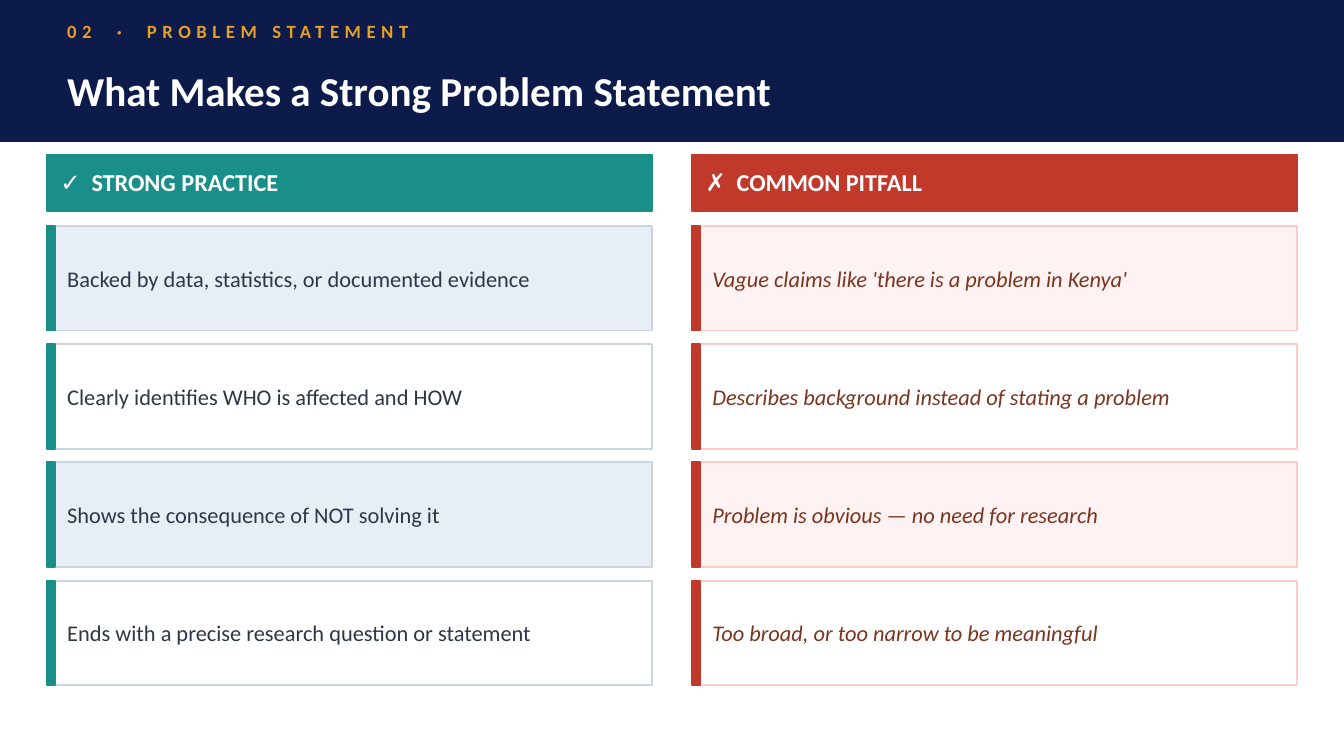
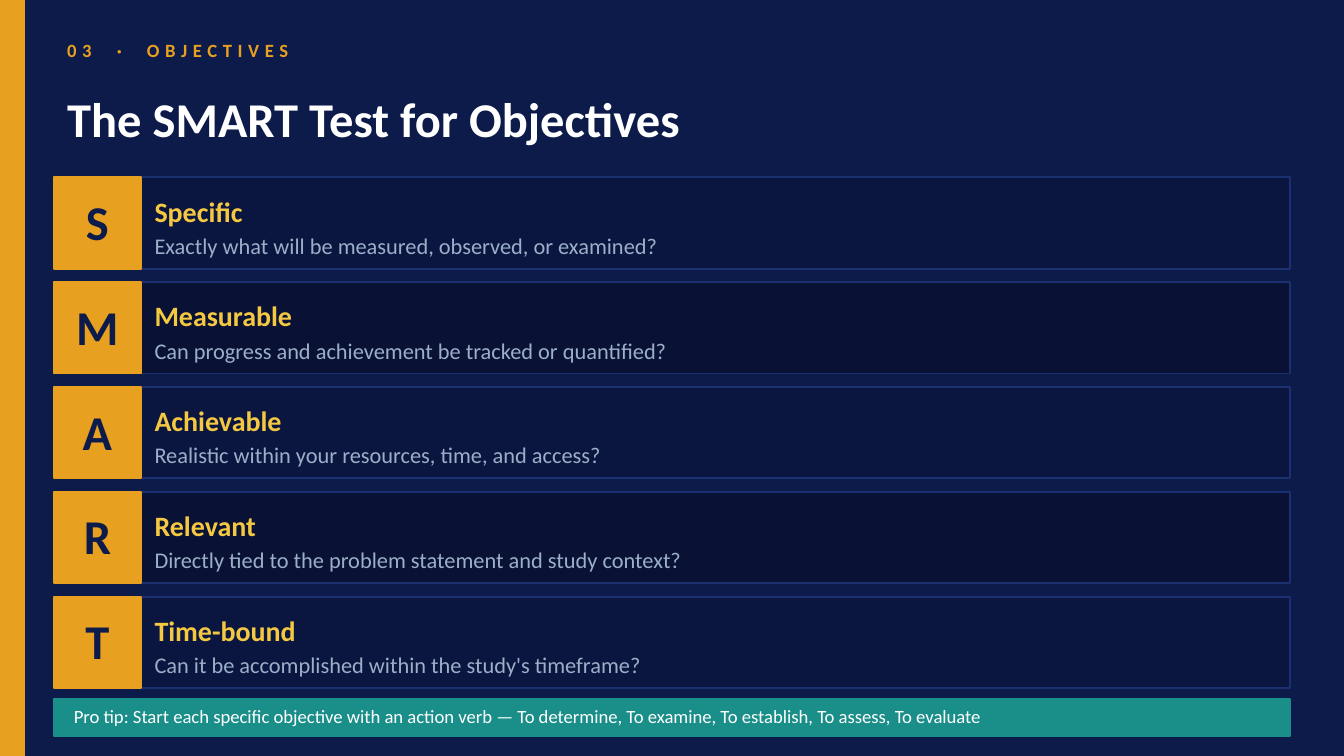
"""Build two research-writing slides: problem statements and SMART objectives."""
from pptx import Presentation
from pptx.dml.color import RGBColor
from pptx.enum import shapes, text
from pptx.oxml import ns
from pptx.util import Pt

FONT = "Calibri"
WIDE, HIGH = 720, 405
HEX = {
    "navy": "0D1B4B", "gold": "E8A020", "teal": "1A8F8A", "red": "C0392B",
    "white": "FFFFFF", "ink": "2D3748", "rust": "7B341E", "mist": "E8EEF6",
    "steel": "CBD5E0", "blush": "FEF2F2", "pink": "FECACA", "deep": "0A1640",
    "night": "091235", "edge": "1A3070", "sun": "F5C842", "haze": "9CAFC8",
}
SIDES = [
    {"head": "✓  STRONG PRACTICE", "main": "teal", "tint": "mist",
     "edge": "steel", "ink": "ink", "italic": False, "rows": [
         "Backed by data, statistics, or documented evidence",
         "Clearly identifies WHO is affected and HOW",
         "Shows the consequence of NOT solving it",
         "Ends with a precise research question or statement"]},
    {"head": "✗  COMMON PITFALL", "main": "red", "tint": "blush",
     "edge": "pink", "ink": "rust", "italic": True, "rows": [
         "Vague claims like 'there is a problem in Kenya'",
         "Describes background instead of stating a problem",
         "Problem is obvious — no need for research",
         "Too broad, or too narrow to be meaningful"]},
]
SMART = [
    ("Specific", "Exactly what will be measured, observed, or examined?"),
    ("Measurable", "Can progress and achievement be tracked or quantified?"),
    ("Achievable", "Realistic within your resources, time, and access?"),
    ("Relevant", "Directly tied to the problem statement and study context?"),
    ("Time-bound", "Can it be accomplished within the study's timeframe?"),
]
TIP = ("Pro tip: Start each specific objective with an action verb — "
       "To determine, To examine, To establish, To assess, To evaluate")


def tone(name):
    return RGBColor.from_string(HEX[name])


def rect(slide, x, y, w, h, fill, line=None):
    box = slide.shapes.add_shape(
        shapes.MSO_SHAPE.RECTANGLE, Pt(x), Pt(y), Pt(w), Pt(h))
    box.shadow.inherit = False
    box.fill.solid()
    box.fill.fore_color.rgb = tone(fill)
    box.line.color.rgb = tone(line or fill)
    box.line.width = Pt(1)


def write(slide, words, x, y, w, h, size=12, color="white", bold=False,
          italic=False, center=False, track=0, box=None):
    spot = Pt(x), Pt(y), Pt(w), Pt(h)
    box = box or slide.shapes.add_textbox(*spot)
    box.left, box.top, box.width, box.height = spot
    frame = box.text_frame
    frame.word_wrap = True
    frame.auto_size = text.MSO_AUTO_SIZE.NONE
    frame.vertical_anchor = text.MSO_ANCHOR.MIDDLE
    frame.margin_left = frame.margin_right = 0
    frame.margin_top = frame.margin_bottom = 0
    para = frame.paragraphs[0]
    para.alignment = text.PP_ALIGN.CENTER if center else text.PP_ALIGN.LEFT
    run = para.add_run()
    run.text = words
    font = run.font
    font.name, font.size = FONT, Pt(size)
    font.bold, font.italic = bold, italic
    font.color.rgb = tone(color)
    if track:
        for props in box.element.iter(ns.qn("a:rPr")):
            props.set("spc", str(track * 100))


def start(deck, back, band, label, title, tops, highs, size):
    slide = deck.slides.add_slide(deck.slide_layouts[5])
    slide.background.fill.solid()
    slide.background.fill.fore_color.rgb = tone(back)
    rect(slide, 0, 0, *band)
    write(slide, label, 36, tops[0], 648, highs[0], size=10, color="gold",
          bold=True, track=3)
    head = slide.shapes.title
    head.element.getparent().append(head.element)
    write(slide, title, 36, tops[1], 648, highs[1], size=size, bold=True,
          box=head)
    return slide


def compare(deck):
    slide = start(deck, "white", (WIDE, 75.6, "navy"),
                  "02  ·  PROBLEM STATEMENT",
                  "What Makes a Strong Problem Statement",
                  (5.76, 30.24), (21.6, 36), 22)
    wide, tall, step = 324, 56.16, 63.36
    for col, side in enumerate(SIDES):
        x = 25.2 + col * 345.6
        rect(slide, x, 82.8, wide, 30.24, side["main"])
        write(slide, side["head"], x + 7.2, 86.4, 309.6, 21.6, size=13,
              bold=True)
        for row, words in enumerate(side["rows"]):
            y = 120.96 + row * step
            fill = "white" if row % 2 else side["tint"]
            rect(slide, x, y, wide, tall, fill, side["edge"])
            rect(slide, x, y, 4.32, tall, side["main"])
            write(slide, words, x + 10.8, y + 7.2, 298.8, tall - 14.4,
                  color=side["ink"], italic=side["italic"])


def smart(deck):
    slide = start(deck, "navy", (12.96, HIGH, "gold"),
                  "03  ·  OBJECTIVES", "The SMART Test for Objectives",
                  (14.4, 44.64), (25.2, 37.44), 26)
    x, wide, tall, step, tile = 28.8, 662.4, 48.96, 56.16, 46.8
    for row, (name, ask) in enumerate(SMART):
        y = 95.04 + row * step
        rect(slide, x, y, wide, tall, "night" if row % 2 else "deep", "edge")
        rect(slide, x, y, tile, tall, "gold")
        write(slide, name[0], x, y + 7.2, tile, 32.4, size=26, color="navy",
              bold=True, center=True)
        left = x + tile + 7.2
        write(slide, name, left, y + 7.2, 151.2, 21.6, size=15, color="sun",
              bold=True)
        write(slide, ask, left, y + 27.36, 590.4, 18, color="haze")
    rect(slide, x, 374.4, wide, 20.16, "teal")
    write(slide, TIP, x + 10.8, 375.84, 648, 15.84, size=10)


def main():
    deck = Presentation()
    deck.slide_width, deck.slide_height = Pt(WIDE), Pt(HIGH)
    compare(deck)
    smart(deck)
    deck.save("out.pptx")


if __name__ == "__main__":
    main()
